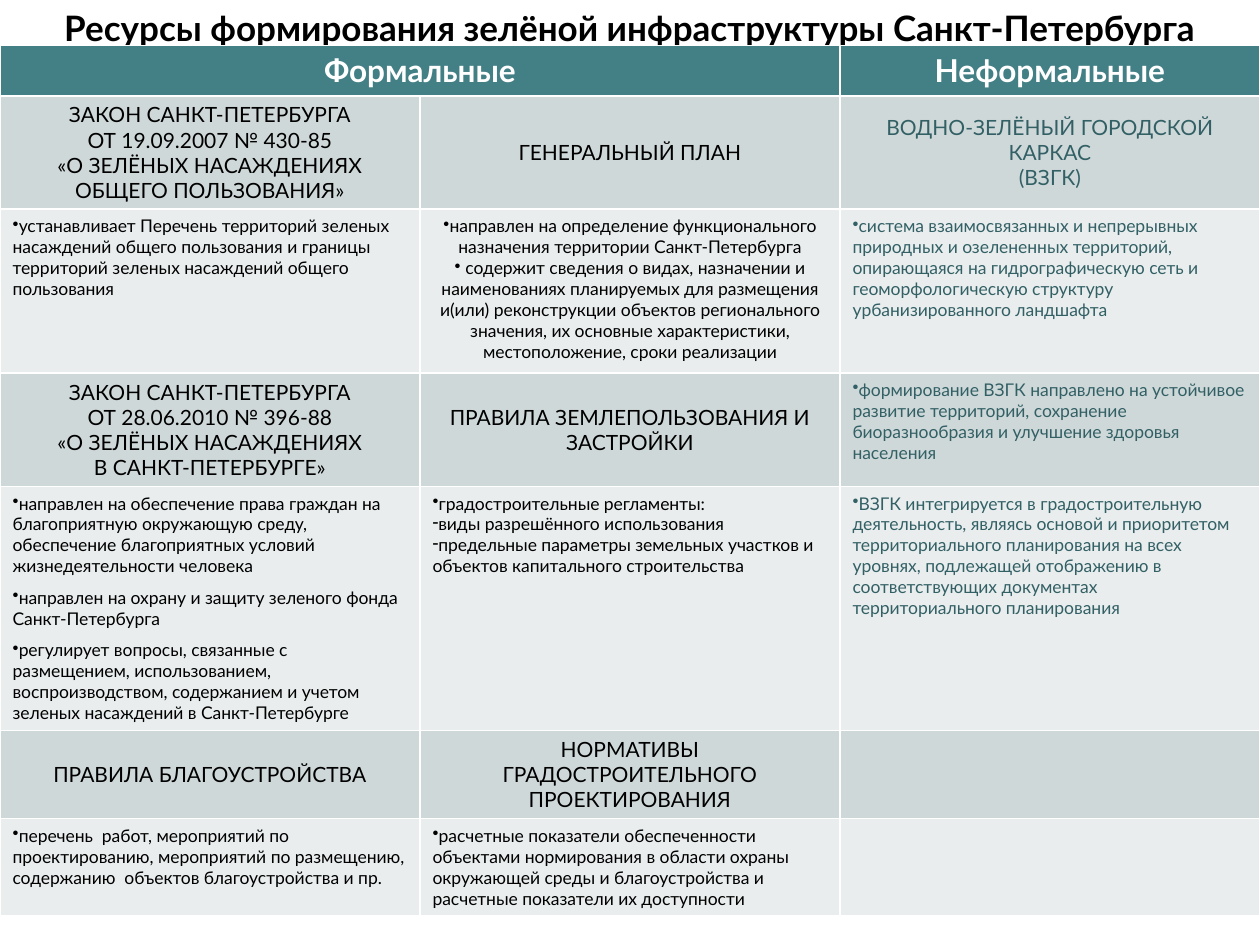
from dataclasses import dataclass

from lxml.etree import SubElement
from pptx import Presentation
from pptx.dml.color import RGBColor
from pptx.enum.text import MSO_ANCHOR, MSO_AUTO_SIZE, PP_ALIGN
from pptx.oxml.ns import qn
from pptx.util import Inches, Pt

FONT = "Lato"
BLACK, WHITE = "000000", "FFFFFF"
TEAL, DARK_TEAL = "438086", "326065"
BANDS = ("CFD8D9", "E9EDED")
ROW_HEIGHTS = (0.32, 0.89, 1.3, 0.89, 1.86, 0.4, 0.4)
COLUMNS = 3


@dataclass
class Entry:
    lines: tuple[str, ...]
    size: int = 12
    bullets: str = ""
    centered: bool = True
    middle: bool = False
    space_after: int = 0


def heading(*lines: str, middle: bool = False) -> Entry:
    return Entry(lines, middle=middle)


def details(*lines: str, bullets: str = "•", centered: bool = False, space_after: int = 0) -> Entry:
    return Entry(lines, 10, bullets, centered, False, space_after)


EMPTY = Entry(())
ROWS = (
    (
        heading("ЗАКОН САНКТ-ПЕТЕРБУРГА", "ОТ 19.09.2007 № 430-85\n«О ЗЕЛЁНЫХ НАСАЖДЕНИЯХ ОБЩЕГО ПОЛЬЗОВАНИЯ»"),
        heading("ГЕНЕРАЛЬНЫЙ ПЛАН", middle=True),
        heading("ВОДНО-ЗЕЛЁНЫЙ ГОРОДСКОЙ КАРКАС", "(ВЗГК)", middle=True),
    ),
    (
        details("устанавливает Перечень территорий зеленых насаждений общего пользования "
                "и границы территорий зеленых насаждений общего пользования"),
        details("направлен на определение функционального назначения территории Санкт‑Петербурга",
                " содержит сведения о видах, назначении и наименованиях планируемых для размещения "
                "и(или) реконструкции объектов регионального значения, их основные характеристики, "
                "местоположение, сроки реализации", centered=True),
        details("система взаимосвязанных и непрерывных природных и озелененных территорий, "
                "опирающаяся на гидрографическую сеть и геоморфологическую структуру "
                "урбанизированного ландшафта"),
    ),
    (
        heading("ЗАКОН САНКТ-ПЕТЕРБУРГА", "ОТ 28.06.2010 № 396-88\n«О ЗЕЛЁНЫХ НАСАЖДЕНИЯХ",
                "В САНКТ-ПЕТЕРБУРГЕ»"),
        heading("ПРАВИЛА ЗЕМЛЕПОЛЬЗОВАНИЯ И ЗАСТРОЙКИ", middle=True),
        details("формирование ВЗГК направлено на устойчивое развитие территорий, сохранение "
                "биоразнообразия и улучшение здоровья населения"),
    ),
    (
        details("направлен на обеспечение права граждан на благоприятную окружающую среду, "
                "обеспечение благоприятных условий жизнедеятельности человека",
                "направлен на охрану и защиту зеленого фонда Санкт-Петербурга",
                "регулирует вопросы, связанные с размещением, использованием, воспроизводством, "
                "содержанием и учетом зеленых насаждений в Санкт-Петербурге", space_after=6),
        details("градостроительные регламенты:", "виды разрешённого использования",
                "предельные параметры земельных участков и объектов капитального строительства",
                bullets="•--"),
        details("ВЗГК интегрируется в градостроительную деятельность, являясь основой "
                "и приоритетом территориального планирования на всех уровнях, подлежащей "
                "отображению в соответствующих документах территориального планирования"),
    ),
    (
        heading("ПРАВИЛА БЛАГОУСТРОЙСТВА", middle=True),
        heading("НОРМАТИВЫ ГРАДОСТРОИТЕЛЬНОГО ПРОЕКТИРОВАНИЯ"),
        EMPTY,
    ),
    (
        details("перечень  работ, мероприятий по проектированию, мероприятий по размещению, "
                "содержанию  объектов благоустройства и пр."),
        details("расчетные показатели обеспеченности объектами нормирования в области охраны "
                "окружающей среды и благоустройства и расчетные показатели их доступности"),
        EMPTY,
    ),
)


def set_fill(target, color: str) -> None:
    target.fill.solid()
    target.fill.fore_color.rgb = RGBColor.from_string(color)


def write_paragraph(p, text: str, size: int, color: str, bold: bool = False, centered: bool = True) -> None:
    p.text = text
    p.alignment = PP_ALIGN.CENTER if centered else PP_ALIGN.LEFT
    for r in p.runs:
        r.font.name = FONT
        r.font.size = Pt(size)
        r.font.bold = bold
        r.font.color.rgb = RGBColor.from_string(color)


def add_bullet(p, char: str) -> None:
    pPr = p._p.get_or_add_pPr()
    pPr.set("marL", "0")
    pPr.set("indent", "0")
    SubElement(pPr, qn("a:buChar")).set("char", char)


def fill_cell(cell, entry: Entry, color: str) -> None:
    tf = cell.text_frame
    if entry.middle:
        cell.vertical_anchor = MSO_ANCHOR.MIDDLE
    last = len(entry.lines) - 1
    for i, line in enumerate(entry.lines):
        p = tf.add_paragraph() if i else tf.paragraphs[0]
        write_paragraph(p, line, entry.size, color, centered=entry.centered)
        if entry.space_after and i < last:
            p.space_after = Pt(entry.space_after)
        if entry.bullets:
            add_bullet(p, entry.bullets[i % len(entry.bullets)])


def add_title(s, text: str) -> None:
    sp = s.shapes.title
    sp.left, sp.top, sp.width, sp.height = Inches(0), Inches(0), Inches(10), Inches(0.44)
    set_fill(sp, WHITE)
    tf = sp.text_frame
    tf.word_wrap = True
    tf.auto_size = MSO_AUTO_SIZE.SHAPE_TO_FIT_TEXT
    tf.vertical_anchor = MSO_ANCHOR.MIDDLE
    write_paragraph(tf.paragraphs[0], text, 20, BLACK, bold=True)


def add_resources_table(s) -> None:
    frame = s.shapes.add_table(len(ROW_HEIGHTS), COLUMNS, Inches(0), Inches(0.36), Inches(10), Inches(6.9))
    table = frame.table
    for row, height in zip(table.rows, ROW_HEIGHTS):
        row.height = Inches(height)
    frame.height = Inches(6.9)
    table.cell(0, 0).merge(table.cell(0, 1))
    for col, text in ((0, "Формальные"), (2, "Неформальные")):
        cell = table.cell(0, col)
        set_fill(cell, TEAL)
        write_paragraph(cell.text_frame.paragraphs[0], text, 18, WHITE, bold=True)
    for i, entries in enumerate(ROWS):
        for col, entry in enumerate(entries):
            cell = table.cell(i + 1, col)
            set_fill(cell, BANDS[i % 2])
            fill_cell(cell, entry, DARK_TEAL if col == 2 else BLACK)


def main() -> None:
    prs = Presentation()
    prs.slide_width, prs.slide_height = Inches(10), Inches(7.5)
    s = prs.slides.add_slide(prs.slide_layouts[5])
    add_title(s, "Ресурсы формирования зелёной инфраструктуры Санкт-Петербурга")
    add_resources_table(s)
    prs.save("out.pptx")


if __name__ == "__main__":
    main()
